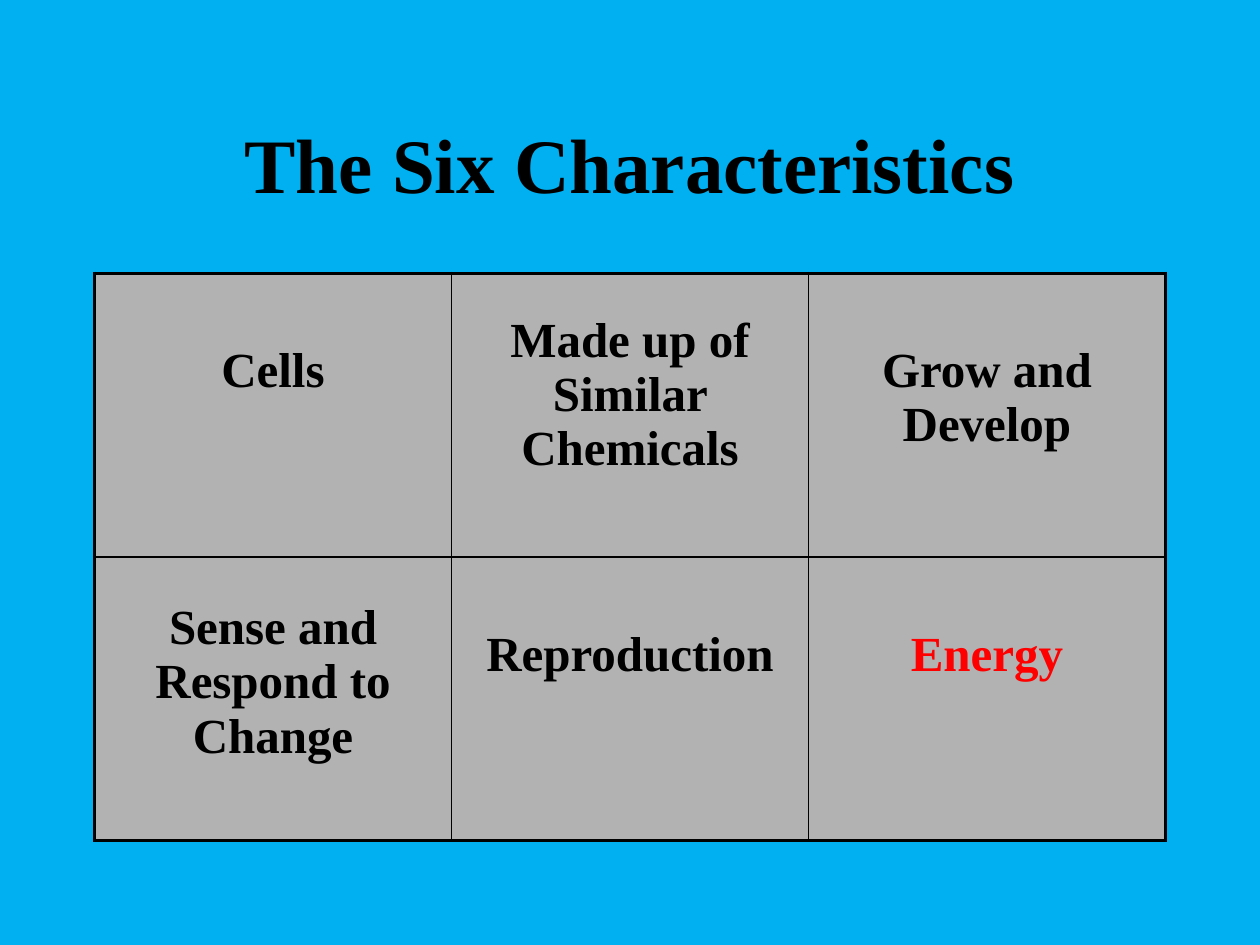
from lxml.etree import SubElement
from pptx import Presentation
from pptx.dml.color import RGBColor
from pptx.enum.text import MSO_ANCHOR, PP_ALIGN
from pptx.oxml.ns import qn
from pptx.util import Inches, Pt

BLACK, RED, GRAY, SKY = "000000", "FF0000", "B2B2B2", "00B0F0"
CHARACTERISTICS = [
    [("Cells", 0.56, BLACK), ("Made up of Similar Chemicals", 0.32, BLACK),
     ("Grow and Develop", 0.56, BLACK)],
    [("Sense and Respond to Change", 0.35, BLACK), ("Reproduction", 0.56, BLACK),
     ("Energy", 0.56, RED)],
]


def paint(fill, color):
    """Apply a solid hex colour to a fill."""
    fill.solid()
    fill.fore_color.rgb = RGBColor.from_string(color)


def write(frame, text, size=28, color=BLACK, font="Times New Roman", bold=True):
    """Put one centred, formatted paragraph into a text frame."""
    paragraph = frame.paragraphs[0]
    paragraph.alignment = PP_ALIGN.CENTER
    run = paragraph.add_run()
    run.text = text
    run.font.name = font
    run.font.size = Pt(size)
    run.font.bold = bold
    paint(run.font.fill, color)


def draw_borders(cell, widths, color=BLACK):
    """Draw the left, right, top and bottom cell borders in points."""
    properties = cell._tc.get_or_add_tcPr()
    for position, (side, width) in enumerate(zip("LRTB", widths)):
        line = SubElement(properties, qn(f"a:ln{side}"), w=str(Pt(width)))
        fill = SubElement(line, qn("a:solidFill"))
        SubElement(fill, qn("a:srgbClr"), val=color)
        properties.insert(position, line)


class CharacteristicsSlide:
    """Hold the style and the current slide."""

    outer, inner = 2.25, 1
    left, width = 0.75, 8.5

    def __init__(self, presentation):
        """Add a title-only slide with a plain background."""
        self.slide = presentation.slides.add_slide(presentation.slide_layouts[5])
        paint(self.slide.background.fill, SKY)

    def add_title(self, text, top, height):
        """Place and format the title."""
        title = self.slide.shapes.title
        title.left, title.top = Inches(self.left), Inches(top)
        title.width, title.height = Inches(self.width), Inches(height)
        title.text_frame.vertical_anchor = MSO_ANCHOR.MIDDLE
        write(title.text_frame, text, size=44)

    def add_grid(self, rows, top, height):
        """Add a table with a heavy frame and thin inner lines."""
        row_count, column_count = len(rows), len(rows[0])
        grid = self.slide.shapes.add_table(
            row_count, column_count, Inches(self.left), Inches(top),
            Inches(self.width), Inches(height)).table
        grid.first_row = grid.horz_banding = False
        for r, row in enumerate(rows):
            for c, (text, inset, color) in enumerate(row):
                cell = grid.cell(r, c)
                cell.margin_top = Inches(inset)
                paint(cell.fill, GRAY)
                edges = (c == 0, c == column_count - 1, r == 0, r == row_count - 1)
                draw_borders(cell, [self.outer if edge else self.inner for edge in edges])
                write(cell.text_frame, text, color=color)


def main():
    """Build and save the presentation."""
    presentation = Presentation()
    presentation.slide_width, presentation.slide_height = Inches(10), Inches(7.5)
    page = CharacteristicsSlide(presentation)
    page.add_title("The Six Characteristics", top=0.67, height=1.25)
    page.add_grid(CHARACTERISTICS, top=2.17, height=4.5)
    presentation.save("out.pptx")


if __name__ == "__main__":
    main()
